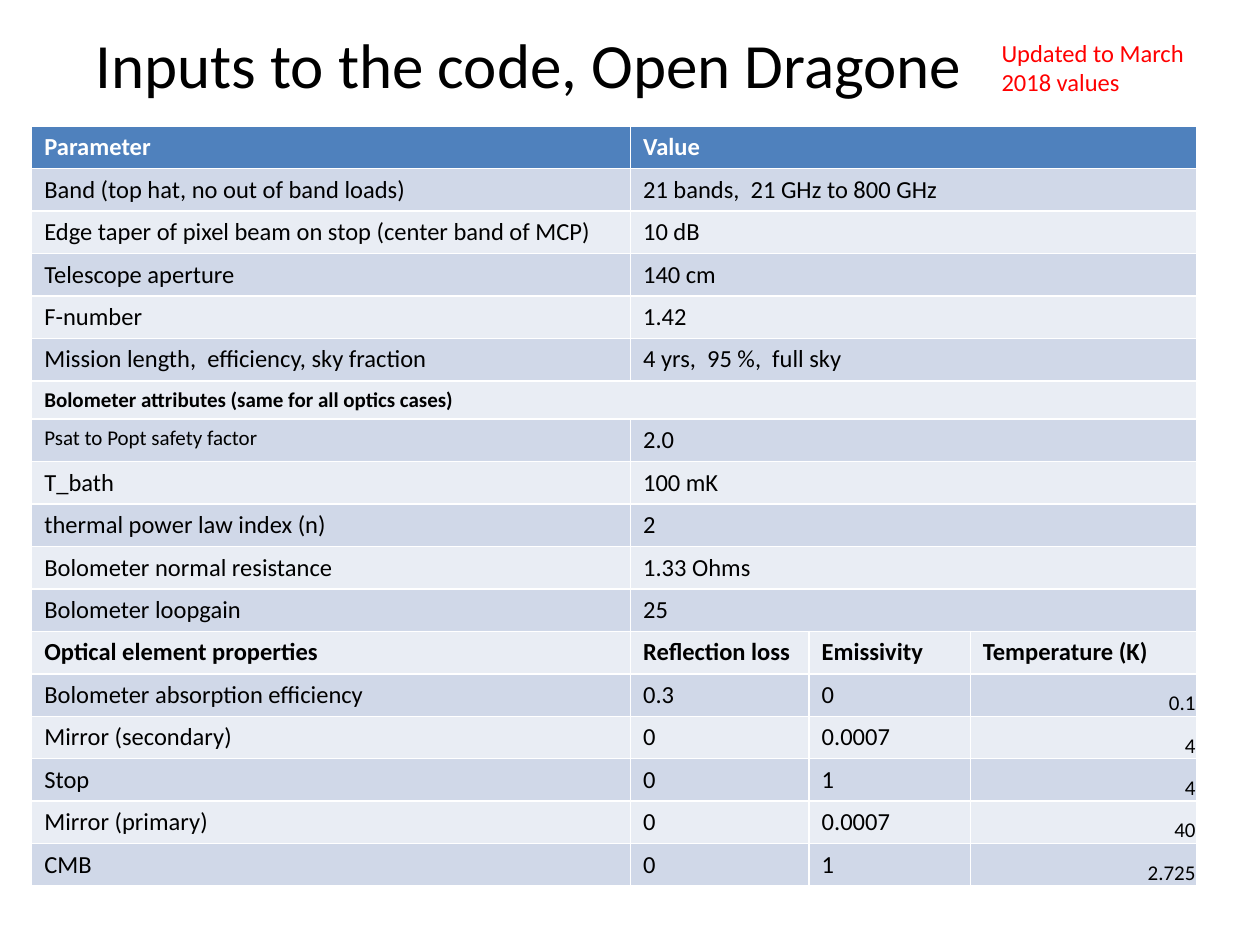
"""Builds the slide listing the inputs to the code for the Open Dragone optics."""
import pptx
import pptx.dml.color
import pptx.enum.text
import pptx.util

Cm = pptx.util.Cm
Pt = pptx.util.Pt
Align = pptx.enum.text.PP_ALIGN
Anchor = pptx.enum.text.MSO_ANCHOR

HEADER = ("Parameter", "Value")
GENERAL = [
    ("Band (top hat, no out of band loads)", "21 bands,  21 GHz to 800 GHz"),
    ("Edge taper of pixel beam on stop (center band of MCP)", "10 dB"),
    ("Telescope aperture", "140 cm"),
    ("F-number", "1.42"),
    ("Mission length,  efficiency, sky fraction", "4 yrs,  95 %,  full sky"),
]
BOLOMETER_HEADING = ("Bolometer attributes (same for all optics cases)",)
SAFETY_FACTOR = ("Psat to Popt safety factor", "2.0")
BOLOMETER = [
    ("T_bath", "100 mK"),
    ("thermal power law index (n)", "2"),
    ("Bolometer normal resistance", "1.33 Ohms"),
    ("Bolometer loopgain", "25"),
]
OPTICS_HEADING = ("Optical element properties", "Reflection loss", "Emissivity", "Temperature (K)")
OPTICS = [
    ("Bolometer absorption efficiency", "0.3", "0", "0.1"),
    ("Mirror (secondary)", "0", "0.0007", "4"),
    ("Stop", "0", "1", "4"),
    ("Mirror (primary)", "0", "0.0007", "40"),
    ("CMB", "0", "1", "2.725"),
]
ROWS = [HEADER, *GENERAL, BOLOMETER_HEADING, SAFETY_FACTOR, *BOLOMETER, OPTICS_HEADING, *OPTICS]
HEADINGS = (HEADER, BOLOMETER_HEADING, OPTICS_HEADING)


def color(value):
    """Turn a hex string into a colour."""
    return pptx.dml.color.RGBColor.from_string(value)


class Sheet:
    """Holds the style and the current slide."""

    font = "Calibri"
    black, white, red = "000000", "FFFFFF", "FF0000"
    header_fill, bands = "4F81BD", ("E9EDF4", "D0D8E8")

    def __init__(self, slide):
        """Keep the slide to draw on."""
        self.slide = slide

    def set_text(self, frame, text, size, ink, bold=False, align=Align.LEFT):
        """Set the text of a frame and format it."""
        frame.text = text
        paragraph = frame.paragraphs[0]
        paragraph.alignment = align
        for run in paragraph.runs:
            run.font.name = self.font
            run.font.size = Pt(size)
            run.font.bold = bold
            run.font.color.rgb = color(ink)

    def title(self, text, left, top, width, height):
        """Fill and move the title placeholder."""
        heading = self.slide.shapes.title
        heading.left, heading.top = Cm(left), Cm(top)
        heading.width, heading.height = Cm(width), Cm(height)
        self.set_text(heading.text_frame, text, 36, self.black, align=Align.CENTER)
        heading.text_frame.vertical_anchor = Anchor.MIDDLE

    def note(self, text, left, top, width, height):
        """Add a wrapped red remark."""
        frame = self.slide.shapes.add_textbox(Cm(left), Cm(top), Cm(width), Cm(height)).text_frame
        frame.word_wrap = True
        frame.auto_size = pptx.enum.text.MSO_AUTO_SIZE.SHAPE_TO_FIT_TEXT
        self.set_text(frame, text, 14, self.red)

    def table(self, rows, left, top, widths, row_height):
        """Add the table; the last entry of a short row spans the remaining columns."""
        last = len(widths) - 1
        grid = self.slide.shapes.add_table(
            len(rows), len(widths), Cm(left), Cm(top), Cm(sum(widths)), Cm(row_height * len(rows))
        ).table
        for column, width in zip(grid.columns, widths):
            column.width = Cm(width)
        for r, entries in enumerate(rows):
            fill = self.bands[r % 2] if r else self.header_fill
            for c in range(len(widths)):
                cell = grid.cell(r, c)
                cell.fill.solid()
                cell.fill.fore_color.rgb = color(fill)
            if len(entries) <= last:
                grid.cell(r, len(entries) - 1).merge(grid.cell(r, last))
            for c, text in enumerate(entries):
                cell = grid.cell(r, c)
                temperature = c == last and entries not in HEADINGS
                small = temperature or entries is BOLOMETER_HEADING or text == SAFETY_FACTOR[0]
                self.set_text(
                    cell.text_frame, text, 12 if small else 14,
                    self.black if r else self.white, entries in HEADINGS,
                    Align.RIGHT if temperature else Align.LEFT,
                )
                if temperature:
                    cell.vertical_anchor = Anchor.BOTTOM
                    cell.margin_left = cell.margin_top = cell.margin_right = Cm(0.03)
                    cell.margin_bottom = 0


def main():
    """Build and save the slide."""
    deck = pptx.Presentation()
    deck.slide_width, deck.slide_height = Cm(25.4), Cm(19.05)
    sheet = Sheet(deck.slides.add_slide(deck.slide_layouts[5]))
    sheet.title("Inputs to the code, Open Dragone", 1.37, 0, 18.57, 2.57)
    sheet.table(ROWS, 0.64, 2.54, (12.07, 3.6, 3.25, 4.57), 0.7)
    sheet.note("Updated to March 2018 values", 19.94, 0.64, 4.62, 1.45)
    deck.save("out.pptx")


if __name__ == "__main__":
    main()
